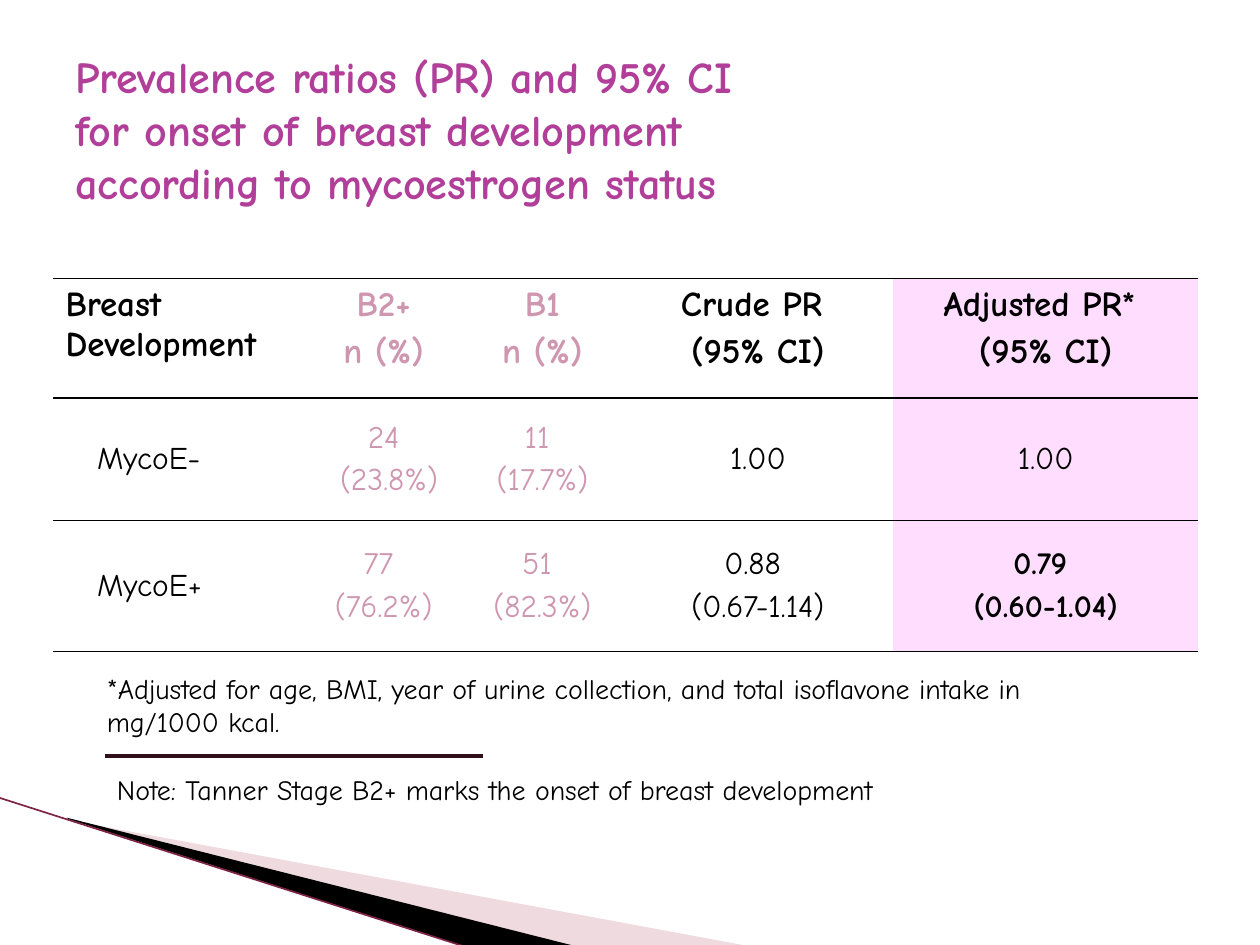
from dataclasses import dataclass

from lxml.etree import SubElement
from pptx import Presentation
from pptx.dml.color import RGBColor
from pptx.enum.shapes import MSO_CONNECTOR
from pptx.enum.text import MSO_ANCHOR, PP_ALIGN
from pptx.oxml import parse_xml
from pptx.oxml.ns import nsdecls, qn
from pptx.util import Inches, Pt


@dataclass(frozen=True)
class Theme:
    font: str = "Comic Neue"
    title: str = "B13F9A"
    ink: str = "000000"
    muted: str = "CF96B0"
    highlight: str = "FFDDFF"
    wedge: str = "D8A3AF"
    edge: str = "7F2346"
    rule: str = "2E0F1A"
    title_size: float = 25.2
    header_size: float = 20
    body_size: float = 18
    note_size: float = 16


THEME = Theme()
NO_TABLE_STYLE = "{2D5ABB26-0587-4C30-8999-92F81FD0307C}"

# The slide is a grid of 100 columns by 75 rows.
GRID_COLUMNS, GRID_ROWS = 100, 75
UNIT = Inches(0.1)

COLUMN_WIDTHS = [20, 12.5, 12.7, 21.5, 24.2]
ROW_HEIGHTS = [9.5, 9.7, 10.4]
MUTED_COLUMNS = (1, 2)
HIGHLIGHT_COLUMN = 4
TABLE_ROWS = [
    [["Breast Development"], ["B2+", "n (%)"], ["B1", "n (%)"],
     ["Crude PR ", "(95% CI)"], ["Adjusted PR* ", "(95% CI)"]],
    [["MycoE-"], ["24", " (23.8%)"], ["11 ", "(17.7%)"], ["1.00"], ["1.00"]],
    [["MycoE+"], ["77 ", "(76.2%)"], ["51 ", "(82.3%)"],
     ["0.88 ", "(0.67-1.14)"], ["0.79 ", "(0.60-1.04)"]],
]


def grid(*counts):
    return [round(count * UNIT) for count in counts]


def add_span(para, text, size, color, bold=False):
    span = para.add_run()
    span.text = text
    span.font.name = THEME.font
    span.font.size = Pt(size)
    span.font.bold = bold
    span.font.color.rgb = RGBColor.from_string(color)


def add_text(page, area, lines, size, color, bold=False, wrap=True,
             anchor=MSO_ANCHOR.TOP):
    box = page.shapes.add_textbox(*grid(*area))
    frame = box.text_frame
    frame.word_wrap = wrap
    frame.vertical_anchor = anchor
    para = frame.paragraphs[0]
    for index, line in enumerate(lines):
        if index:
            para.add_line_break()
        add_span(para, line, size, color, bold)


def add_wedge(page, corners, color, opacity=100):
    points = [tuple(grid(*corner)) for corner in corners]
    builder = page.shapes.build_freeform(*points[0], scale=1.0)
    builder.add_line_segments(points[1:], close=True)
    wedge = builder.convert_to_shape()
    wedge.shadow.inherit = False
    wedge.line.fill.background()
    wedge.fill.solid()
    wedge.fill.fore_color.rgb = RGBColor.from_string(color)
    if opacity < 100:
        tone = wedge.fill._xPr.find(qn("a:solidFill"))[0]
        SubElement(tone, qn("a:alpha")).set("val", str(opacity * 1000))


def add_rule(page, start, end, color, width):
    rule = page.shapes.add_connector(
        MSO_CONNECTOR.STRAIGHT, *grid(*start), *grid(*end))
    rule.line.color.rgb = RGBColor.from_string(color)
    rule.line.width = Pt(width)
    SubElement(rule._element.spPr, qn("a:effectLst"))


def add_border(cell, side):
    """Draw a one-point border; side is T or B."""
    border = parse_xml(
        f'<a:ln{side} {nsdecls("a")} w="{Pt(1)}"><a:solidFill>'
        f'<a:srgbClr val="{THEME.ink}"/></a:solidFill></a:ln{side}>')
    cell._tc.get_or_add_tcPr().insert(0, border)


def fill_cell(cell, lines, row, column):
    header = row == 0
    size = THEME.header_size if header else THEME.body_size
    color = THEME.muted if column in MUTED_COLUMNS else THEME.ink
    bold = header or (row == 2 and column == HIGHLIGHT_COLUMN)
    cell.vertical_anchor = MSO_ANCHOR.TOP if header else MSO_ANCHOR.MIDDLE
    for index, line in enumerate(lines):
        frame = cell.text_frame
        para = frame.add_paragraph() if index else frame.paragraphs[0]
        if index:
            para.space_before = Pt(size * 0.2)
        if column:
            para.alignment = PP_ALIGN.CENTER
        elif not header:
            properties = para._p.get_or_add_pPr()
            properties.set("marL", str(Inches(0.25)))
            properties.set("indent", "0")
        add_span(para, line, size, color, bold)
    if column == HIGHLIGHT_COLUMN:
        cell.fill.solid()
        cell.fill.fore_color.rgb = RGBColor.from_string(THEME.highlight)
    else:
        cell.fill.background()
    if row == len(TABLE_ROWS) - 1:
        add_border(cell, "B")
    else:
        if header:
            add_border(cell, "B")
        add_border(cell, "T")


def add_ratio_table(page, left, top):
    area = grid(left, top, sum(COLUMN_WIDTHS), sum(ROW_HEIGHTS))
    table = page.shapes.add_table(
        len(ROW_HEIGHTS), len(COLUMN_WIDTHS), *area).table
    table.first_row = table.horz_banding = False
    table._tbl.tblPr.find(qn("a:tableStyleId")).text = NO_TABLE_STYLE
    for column, width in zip(table.columns, grid(*COLUMN_WIDTHS)):
        column.width = width
    for row, height in zip(table.rows, grid(*ROW_HEIGHTS)):
        row.height = height
    for row, entries in enumerate(TABLE_ROWS):
        for column, lines in enumerate(entries):
            fill_cell(table.cell(row, column), lines, row, column)


def add_corner_decoration(page):
    add_wedge(page, [(5.5, 65.1), (59.5, 75.1), (45.6, 75.1), (5.5, 65)],
              THEME.wedge, opacity=40)
    add_wedge(page, [(5.3, 64.9), (45.7, 75.1), (37.2, 75.2), (5.4, 65)],
              THEME.ink)
    add_rule(page, (-0.1, 63.3), (37.1, 75.2), THEME.edge, 0.95)


def main():
    deck = Presentation()
    deck.slide_width, deck.slide_height = grid(GRID_COLUMNS, GRID_ROWS)
    page = deck.slides.add_slide(deck.slide_layouts[6])
    add_corner_decoration(page)
    add_text(page, (5, 3, 90, 14.5),
             ["Prevalence ratios (PR) and 95% CI ",
              "for onset of breast development ",
              "according to mycoestrogen status"],
             THEME.title_size, THEME.title, bold=True,
             anchor=MSO_ANCHOR.MIDDLE)
    add_ratio_table(page, 4.2, 22.1)
    add_text(page, (7.5, 52.8, 76.7, 6.4),
             ["*Adjusted for age, BMI, year of urine collection, and total "
              "isoflavone intake in mg/1000 kcal."],
             THEME.note_size, THEME.ink)
    add_text(page, (8.3, 60.8, 69.8, 3.7),
             ["Note: Tanner Stage B2+ marks the onset of breast development"],
             THEME.note_size, THEME.ink, wrap=False)
    add_rule(page, (8.3, 60), (38.3, 60), THEME.rule, 2.25)
    deck.save("out.pptx")


if __name__ == "__main__":
    main()
